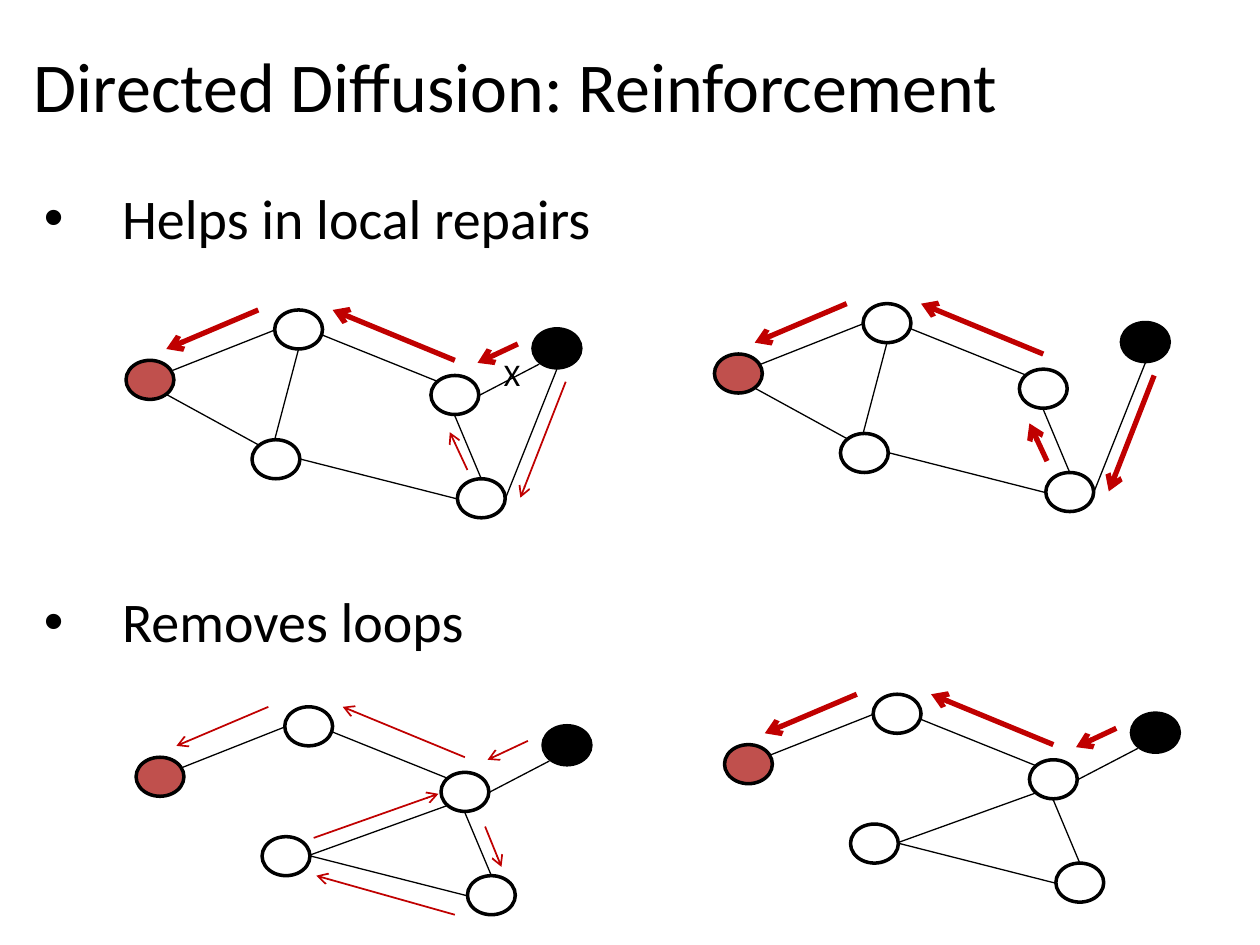
"""Build the Directed Diffusion reinforcement slide with four network graphs."""
from lxml.etree import SubElement
from pptx import Presentation
from pptx.dml.color import RGBColor
from pptx.enum.shapes import MSO_CONNECTOR, MSO_SHAPE
from pptx.enum.text import MSO_ANCHOR
from pptx.oxml.ns import qn
from pptx.util import Pt

EMU_PER_PX = 9144
BLACK, WHITE, SOURCE_RED, ARROW_RED = "000000", "FFFFFF", "C0504D", "C00000"
THIN, BOLD = 1, 3

NODES = {
    "source": (0, 0, SOURCE_RED),
    "sink": (323, -25, BLACK),
    "bottom": (263, 94, WHITE),
    "right": (242, 12, WHITE),
    "lower": (100, 63, WHITE),
    "top": (118, -40, WHITE),
}
EDGES = {
    "source-lower": (32, 27, 105, 67),
    "source-top": (37, 8, 118, -24),
    "top-right": (156, -20, 248, 17),
    "top-lower": (137, -9, 118, 63),
    "lower-bottom": (137, 78, 263, 110),
    "lower-right": (137, 78, 248, 38),
    "right-bottom": (261, 44, 282, 94),
    "right-sink": (280, 28, 328, 3),
    "bottom-sink": (301, 110, 342, 7),
}
ARROWS = {
    "top-source": (105, -40, 32, -9),
    "right-top": (261, 0, 164, -40),
    "sink-right": (311, -13, 279, 2),
    "sink-bottom": (349, 17, 313, 109),
    "bottom-right": (271, 87, 257, 57),
    "bottom-right-near": (264, 85, 250, 55),
    "right-bottom": (277, 55, 290, 87),
    "lower-right": (141, 64, 240, 29),
    "bottom-lower": (253, 125, 143, 94),
}

MAIN_PATH = {"top-source": BOLD, "right-top": BOLD}
REPAIR_EDGES = ["source-lower", "source-top", "top-right", "top-lower",
                "lower-bottom", "right-bottom", "bottom-sink"]
LOOP_EDGES = ["source-top", "top-right", "lower-bottom", "lower-right",
              "right-bottom", "right-sink"]
LOOP_ARROWS = ["top-source", "right-top", "sink-right", "right-bottom",
               "lower-right", "bottom-lower"]
GRAPHS = [
    (100, 286, REPAIR_EDGES + ["right-sink"],
     {**MAIN_PATH, "sink-right": BOLD, "sink-bottom": THIN, "bottom-right": THIN}),
    (567, 281, REPAIR_EDGES,
     {**MAIN_PATH, "sink-bottom": BOLD, "bottom-right-near": BOLD}),
    (108, 601, LOOP_EDGES, dict.fromkeys(LOOP_ARROWS, THIN)),
    (575, 591, LOOP_EDGES, {**MAIN_PATH, "sink-right": BOLD}),
]


def px(*lengths):
    return [length * EMU_PER_PX for length in lengths]


def color(hex_string):
    return RGBColor.from_string(hex_string)


class SlideBuilder:
    font = "Calibri"
    node_size = (38, 31)

    def __init__(self, slide):
        self.slide = slide

    def text(self, box, lines, size, anchor=MSO_ANCHOR.TOP, wrap=True):
        frame = self.slide.shapes.add_textbox(*px(*box)).text_frame
        frame.word_wrap = wrap
        frame.vertical_anchor = anchor
        frame.text = "\n".join(lines)
        for paragraph in frame.paragraphs:
            paragraph.font.name = self.font
            paragraph.font.size = Pt(size)
            paragraph.font.color.rgb = color(BLACK)
        return frame

    def bullets(self, box, lines, size, gap, indent):
        frame = self.text(box, lines, size)
        for paragraph in frame.paragraphs:
            properties = paragraph._p.get_or_add_pPr()
            properties.set("marL", str(indent * EMU_PER_PX))
            properties.set("indent", str(-indent * EMU_PER_PX))
            bullet_font = SubElement(properties, qn("a:buFont"))
            bullet_font.set("typeface", "Arial")
            SubElement(properties, qn("a:buChar")).set("char", "•")
        for paragraph in frame.paragraphs[1:]:
            paragraph.space_before = Pt(gap)

    def node(self, shapes, left, top, fill):
        shape = shapes.add_shape(MSO_SHAPE.OVAL, *px(left, top, *self.node_size))
        shape.shadow.inherit = False
        shape.fill.solid()
        shape.fill.fore_color.rgb = color(fill)
        shape.line.color.rgb = color(BLACK)
        shape.line.width = Pt(2)

    def line(self, shapes, ends, stroke, width, arrow=False):
        connector = shapes.add_connector(MSO_CONNECTOR.STRAIGHT, *px(*ends))
        connector.line.color.rgb = color(stroke)
        connector.line.width = Pt(width)
        if arrow:
            tail = SubElement(connector.line._get_or_add_ln(), qn("a:tailEnd"))
            tail.set("type", "arrow")
        SubElement(connector._element.spPr, qn("a:effectLst"))

    def graph(self, left, top, edges, arrows):
        shapes = self.slide.shapes.add_group_shape().shapes

        def place(x1, y1, x2, y2):
            return left + x1, top + y1, left + x2, top + y2

        for x, y, fill in NODES.values():
            self.node(shapes, left + x, top + y, fill)
        for edge in edges:
            self.line(shapes, place(*EDGES[edge]), BLACK, 0.75)
        for arrow, width in arrows.items():
            self.line(shapes, place(*ARROWS[arrow]), ARROW_RED, width, arrow=True)


def main():
    presentation = Presentation()
    presentation.slide_width, presentation.slide_height = px(1000, 750)
    slide = presentation.slides.add_slide(presentation.slide_layouts[6])
    builder = SlideBuilder(slide)
    builder.text((17, -8, 850, 150), ["Directed Diffusion: Reinforcement"], 40,
                 anchor=MSO_ANCHOR.MIDDLE)
    builder.bullets((25, 141, 975, 596), ["Helps in local repairs", "Removes loops"],
                    size=32, gap=192, indent=62)
    for graph in GRAPHS:
        builder.graph(*graph)
    builder.text((390, 277, 33, 40), ["X"], 18, wrap=False)
    presentation.save("out.pptx")


if __name__ == "__main__":
    main()
